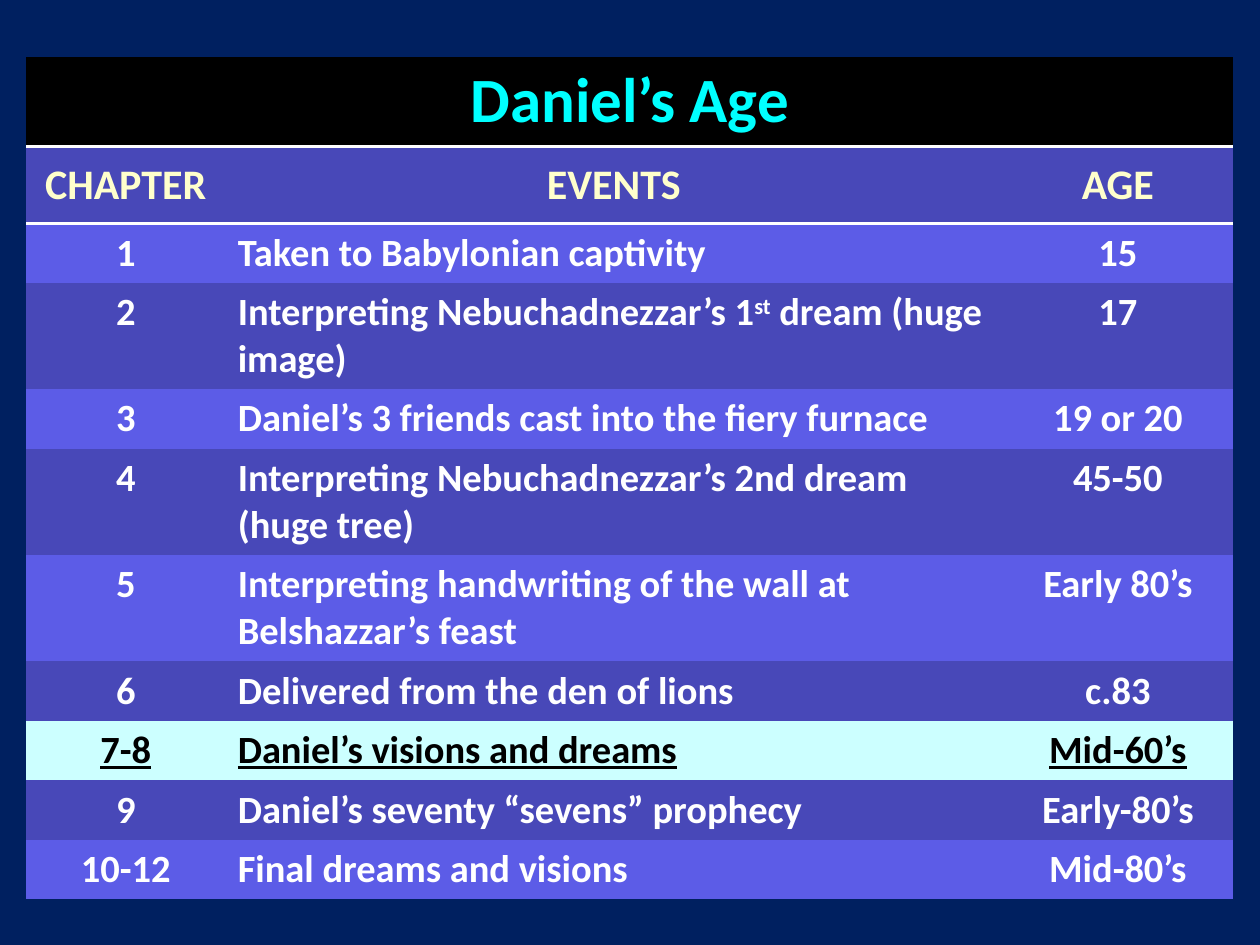
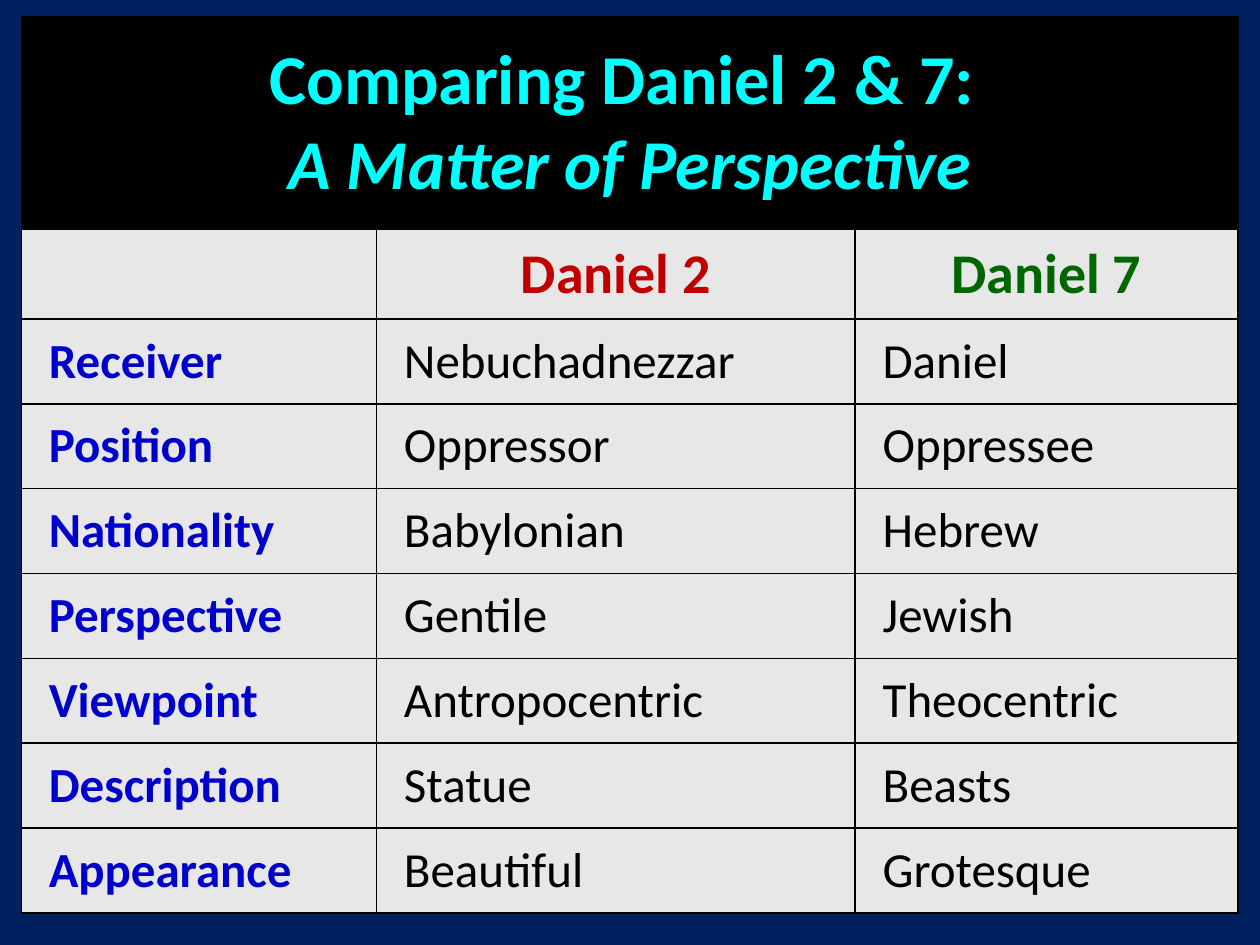
"""Builds two slides of tables on the book of Daniel."""
from lxml import etree
from pptx import Presentation
from pptx import util as u
from pptx.dml import color
from pptx.enum import text
from pptx.oxml import ns

HUES = {
    "navy": "002060", "black": "000000", "white": "FFFFFF", "cyan": "00FFFF",
    "cream": "FFFFCC", "dark": "4848B8", "light": "5C5CE7", "pale": "CCFFFF",
    "grey": "E7E7E7", "red": "C00000", "green": "006600", "blue": "0000CC",
}
PLAIN = "{2D5ABB26-0587-4C30-8999-92F81FD0307C}"
MID = text.MSO_ANCHOR.MIDDLE
TOP = text.MSO_ANCHOR.TOP
HEAD = {"bold": True, "hue": "cyan"}

AGES = [
    ("1", "Taken to Babylonian captivity", "15"),
    ("2", [("Interpreting Nebuchadnezzar’s 1", {}), ("st", {"raised": 30000}),
           (" dream (huge image)", {})], "17"),
    ("3", "Daniel’s 3 friends cast into the fiery furnace", "19 or 20"),
    ("4", "Interpreting Nebuchadnezzar’s 2nd dream (huge tree)", "45-50"),
    ("5", "Interpreting handwriting of the wall at Belshazzar’s feast",
     "Early 80’s"),
    ("6", "Delivered from the den of lions", "c.83"),
    ("7-8", "Daniel’s visions and dreams", "Mid-60’s"),
    ("9", "Daniel’s seventy “sevens” prophecy", "Early-80’s"),
    ("10-12", "Final dreams and visions", "Mid-80’s"),
]
TALL = {"2", "4", "5"}
FOCUS = "7-8"

VIEWS = [
    ("Receiver", "Nebuchadnezzar", "Daniel"),
    ("Position", "Oppressor", "Oppressee"),
    ("Nationality", "Babylonian", "Hebrew"),
    ("Perspective", "Gentile", "Jewish"),
    ("Viewpoint", "Antropocentric", "Theocentric"),
    ("Description", "Statue", "Beasts"),
    ("Appearance", "Beautiful", "Grotesque"),
]


def tint(name):
    """Return the named colour."""
    return color.RGBColor.from_string(HUES[name])


class Deck:
    """Holds the shared style and the current slide."""

    def __init__(self):
        """Open a deck of 4:3 slides."""
        self.prs = Presentation()
        self.prs.slide_width, self.prs.slide_height = u.Cm(25.4), u.Cm(19.05)
        self.font = "Calibri"

    def page(self):
        """Start a blank slide on the shared background."""
        self.slide = self.prs.slides.add_slide(self.prs.slide_layouts[6])
        fill = self.slide.background.fill
        fill.solid()
        fill.fore_color.rgb = tint("navy")

    def table(self, left, top, cols, rows):
        """Add an unstyled table whose first row is one wide cell."""
        box = self.slide.shapes.add_table(
            len(rows), len(cols), u.Cm(left), u.Cm(top),
            u.Cm(sum(cols)), u.Cm(sum(rows)))
        grid = box.table
        grid.first_row = grid.horz_banding = False
        grid._tbl.tblPr[0].text = PLAIN
        for col, size in zip(grid.columns, cols):
            col.width = u.Cm(size)
        for row, size in zip(grid.rows, rows):
            row.height = u.Cm(size)
        grid.cell(0, 0).merge(grid.cell(0, len(cols) - 1))
        return grid

    def edge(self, cell, sides, hue, width):
        """Rule the given sides of a cell; call before filling it."""
        props = cell._tc.get_or_add_tcPr()
        for side in sides:
            line = etree.SubElement(props, ns.qn("a:ln" + side),
                                    w=str(u.Pt(width)))
            fill = etree.SubElement(line, ns.qn("a:solidFill"))
            etree.SubElement(fill, ns.qn("a:srgbClr"), val=HUES[hue])

    def entry(self, cell, words, fill, form, center=True, anchor=TOP,
              indent=0, lead=0):
        """Fill a cell and set its words, a string or (words, format) runs."""
        cell.fill.solid()
        cell.fill.fore_color.rgb = tint(fill)
        cell.vertical_anchor = anchor
        para = cell.text_frame.paragraphs[0]
        para.alignment = (text.PP_ALIGN.CENTER if center
                          else text.PP_ALIGN.LEFT)
        props = para._p.get_or_add_pPr()
        if indent:
            props.set("marL", str(u.Cm(indent)))
        if lead:
            space = etree.SubElement(props, ns.qn("a:spcBef"))
            etree.SubElement(space, ns.qn("a:spcPct"), val=str(lead * 1000))
        runs = [(words, {})] if isinstance(words, str) else words
        for part, extra in runs:
            if part == "\n":
                para.add_line_break()
            elif part:
                self.style(para.add_run(), part, {**form, **extra})

    def style(self, run, words, form):
        """Set the words and format of one run."""
        run.text = words
        run.font.name = self.font
        for key, value in form.items():
            if key == "hue":
                run.font.color.rgb = tint(value)
            elif key == "raised":
                run.font._element.set("baseline", str(value))
            else:
                setattr(run.font, key, value)


def ages(deck):
    """Build the slide of Daniel's age by chapter."""
    deck.page()
    sizes = [1.8, 1.55] + [2.14 if row[0] in TALL else 1.2 for row in AGES]
    grid = deck.table(0.53, 1.14, [4.01, 15.67, 4.65], sizes)
    for col, name in enumerate(("CHAPTER", "EVENTS", "AGE")):
        deck.edge(grid.cell(0, col), "B", "white", 2)
        cell = grid.cell(1, col)
        deck.edge(cell, "T", "white", 2)
        deck.entry(cell, name, "dark",
                   {"size": u.Pt(24), "bold": True, "hue": "cream"},
                   anchor=MID)
    deck.entry(grid.cell(0, 0), "Daniel’s Age", "black",
               {**HEAD, "size": u.Pt(36)})
    for num, row in enumerate(AGES):
        fill = "dark" if num % 2 else "light"
        form = {"size": u.Pt(22), "bold": True, "hue": "white"}
        if row[0] == FOCUS:
            fill = "pale"
            form.update(hue="black", underline=True)
        for col, words in enumerate(row):
            deck.entry(grid.cell(num + 2, col), words, fill, form,
                       center=col != 1)


def views(deck):
    """Build the slide comparing two chapters."""
    deck.page()
    grid = deck.table(0.43, 0.33, [7.16, 9.65, 7.72],
                      [4.3, 1.8] + [1.71] * len(VIEWS))
    for cell in grid.iter_cells():
        deck.edge(cell, "LRTB", "black", 1)
    deck.entry(grid.cell(0, 0),
               [("Comparing Daniel 2 & 7: ", {}), ("\n", {}),
                ("A Matter of Perspective", {"italic": True})],
               "black", {**HEAD, "size": u.Pt(40)}, anchor=MID, lead=20)
    heads = (("", "black"), ("Daniel 2", "red"), ("Daniel 7", "green"))
    for col, (name, hue) in enumerate(heads):
        deck.entry(grid.cell(1, col), name, "grey",
                   {"size": u.Pt(32), "bold": True, "hue": hue},
                   anchor=MID, lead=20)
    for num, row in enumerate(VIEWS, 2):
        for col, words in enumerate(row):
            form = {"size": u.Pt(28), "bold": col == 0,
                    "hue": "black" if col else "blue"}
            deck.entry(grid.cell(num, col), words, "grey", form,
                       center=False, anchor=MID, indent=0.3, lead=20)


def main():
    """Build and save the deck."""
    deck = Deck()
    ages(deck)
    views(deck)
    deck.prs.save("out.pptx")


if __name__ == "__main__":
    main()
